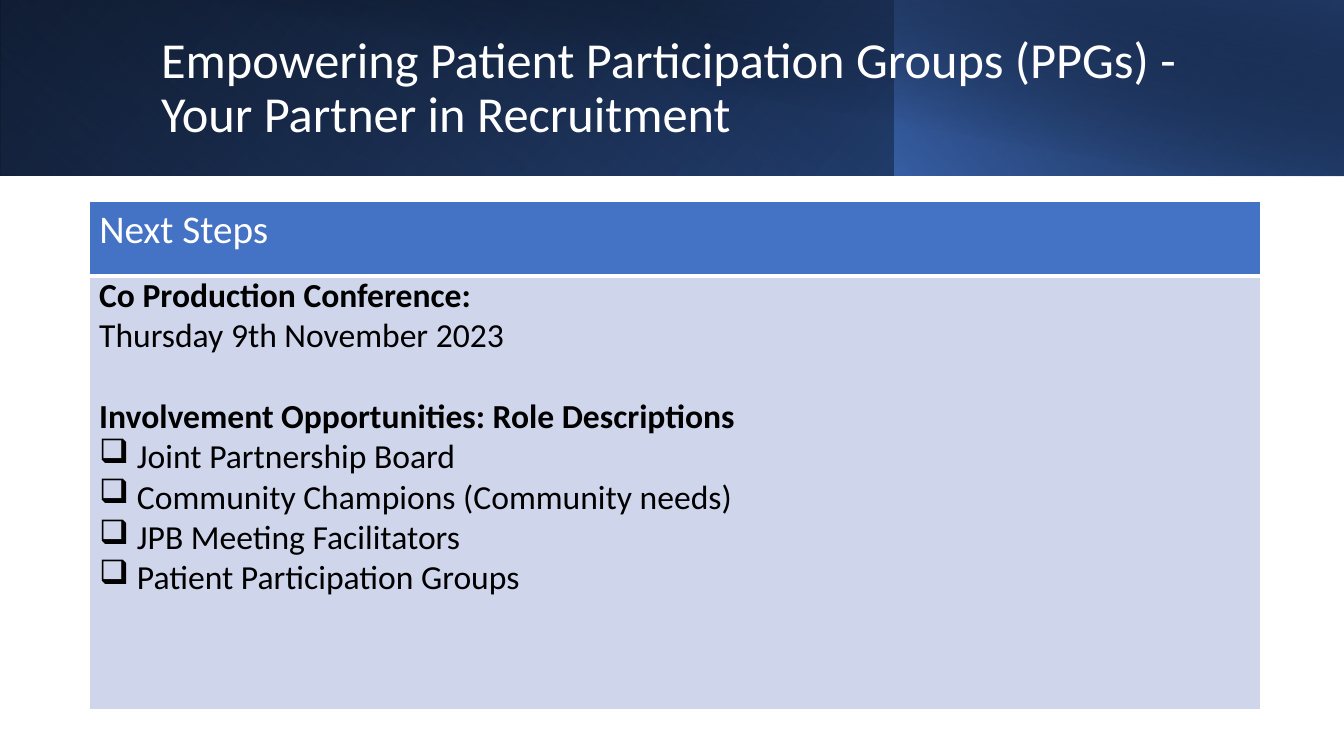
from lxml import etree
from pptx import Presentation, util as u
from pptx.dml.color import RGBColor
from pptx.enum import shapes, text
from pptx.oxml.ns import qn

PX = 9525
WHITE, BLACK, BLUE, NAVY = "FFFFFF", "000000", "4472C4", "203864"


def color(value):
    return RGBColor.from_string(value)


def style(para, size, tint, bold=False):
    for span in para.runs:
        span.font.name = "Calibri"
        span.font.size = u.Pt(size)
        span.font.color.rgb = color(tint)
        span.font.bold = bold


deck = Presentation()
deck.slide_width, deck.slide_height = 1280 * PX, 720 * PX
page = deck.slides.add_slide(deck.slide_layouts[6])

banners = [
    (0, 1280, 167, 0, True, 140, [(0, BLACK, 100), (100, "2F5597", 100)]),
    (0, 852, 167, 180, True, 230, [(20, BLUE, 0), (100, NAVY, 55)]),
    (852, 428, 167, 0, True, 220, [(0, BLUE, 66), (100, BLACK, 30)]),
    (48, 1232, 168, 0, False, 280, [(50, BLACK, 0), (99, NAVY, 52)]),
]
for left, width, height, turn, flipped, angle, stops in banners:
    banner = page.shapes.add_shape(
        shapes.MSO_SHAPE.RECTANGLE, left * PX, 0, width * PX, height * PX)
    banner.shadow.inherit = False
    banner.line.fill.background()
    banner.rotation = turn
    properties = banner._element.spPr
    if flipped:
        properties.find(qn("a:xfrm")).set("flipH", "1")
    gradient = etree.Element(qn("a:gradFill"), rotWithShape="1")
    stop_list = etree.SubElement(gradient, qn("a:gsLst"))
    for position, tint, alpha in stops:
        stop = etree.SubElement(stop_list, qn("a:gs"), pos=str(position * 1000))
        shade = etree.SubElement(stop, qn("a:srgbClr"), val=tint)
        etree.SubElement(shade, qn("a:alpha"), val=str(alpha * 1000))
    etree.SubElement(gradient, qn("a:lin"), ang=str(angle * 60000), scaled="0")
    properties.find(qn("a:prstGeom")).addnext(gradient)

title = page.shapes.add_textbox(144 * PX, 31 * PX, 1039 * PX, 108 * PX).text_frame
title.word_wrap = True
title.vertical_anchor = text.MSO_ANCHOR.MIDDLE
title.text = "Empowering Patient Participation Groups (PPGs) - Your Partner in Recruitment"
title.paragraphs[0].line_spacing = 0.9
style(title.paragraphs[0], 36, WHITE)

table = page.shapes.add_table(2, 1, 85 * PX, 192 * PX, 1116 * PX, 484 * PX).table
rows = [(71, BLUE, "Next Steps", 1, 3), (413, "CFD5EA", "", 3, 1)]
for index, (height, fill, label, top, bottom) in enumerate(rows):
    table.rows[index].height = height * PX
    cell = table.cell(index, 0)
    cell.text = label
    style(cell.text_frame.paragraphs[0], 28, WHITE)
    cell.fill.solid()
    cell.fill.fore_color.rgb = color(fill)
    borders = [("lnL", 1), ("lnR", 1), ("lnT", top), ("lnB", bottom)]
    for order, (side, points) in enumerate(borders):
        border = etree.Element(qn("a:" + side), w=str(u.Pt(points)))
        paint = etree.SubElement(border, qn("a:solidFill"))
        etree.SubElement(paint, qn("a:srgbClr"), val=WHITE)
        cell._tc.tcPr.insert(order, border)

body = page.shapes.add_textbox(85 * PX, 256 * PX, 1088 * PX, 445 * PX).text_frame
body.word_wrap = True
lines = [
    ("Co Production Conference:", "heading"),
    ("Thursday 9th November 2023", "plain"),
    ("Involvement Opportunities: Role Descriptions", "heading"),
    ("Joint Partnership Board", "bullet"),
    ("Community Champions (Community needs)", "bullet"),
    ("JPB Meeting Facilitators", "bullet"),
    ("Patient Participation Groups", "bullet"),
]
body.text = "\n".join(words for words, kind in lines)
for para, (words, kind) in zip(body.paragraphs, lines):
    style(para, 24, BLACK, kind == "heading")
    if kind == "bullet":
        indent = 36 * PX
        settings = para._p.get_or_add_pPr()
        settings.set("marL", str(indent))
        settings.set("indent", str(-indent))
        etree.SubElement(settings, qn("a:buChar"), char="❑")
body.paragraphs[2].space_before = u.Pt(29)

deck.save("out.pptx")
